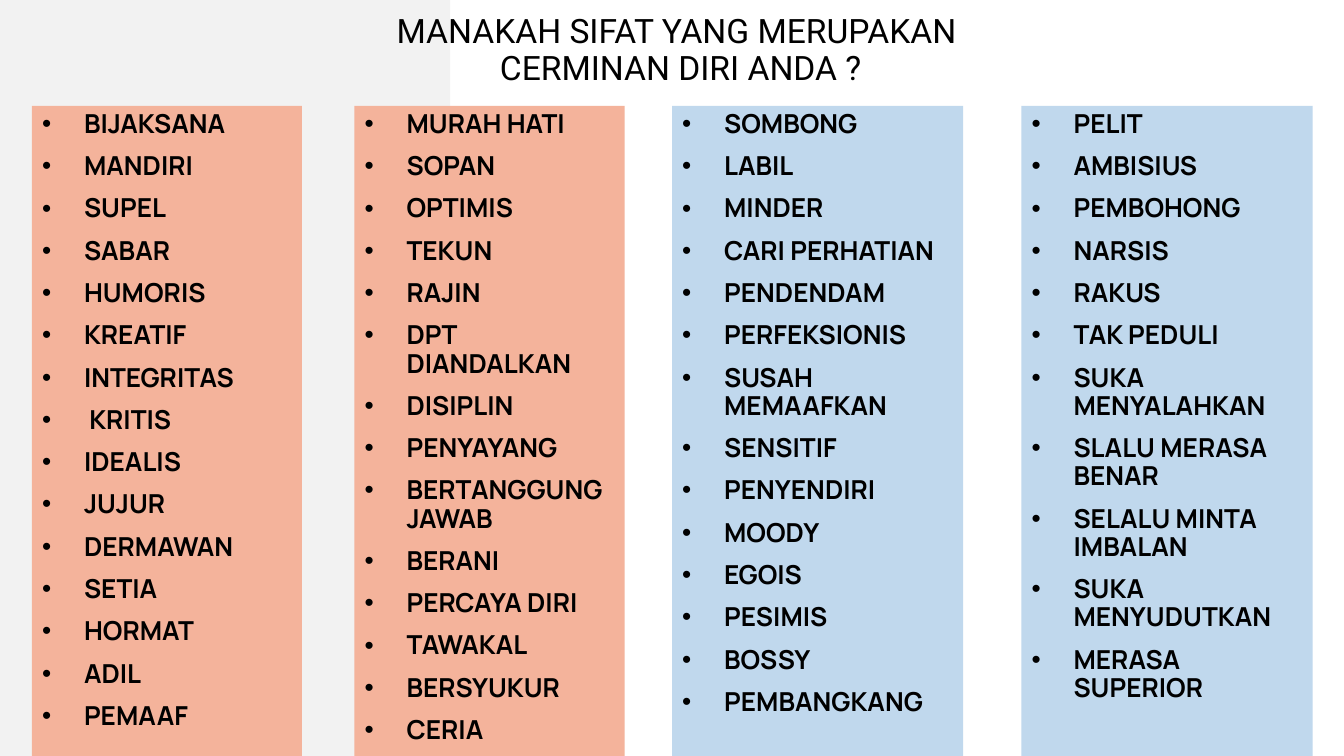
import pptx
import pptx.dml.color
import pptx.enum.shapes
import pptx.enum.text
import pptx.util
from lxml import etree
from pptx.dml.color import RGBColor
from pptx.util import Pt

BLACK = RGBColor(0x00, 0x00, 0x00)
GREY = RGBColor(0xF2, 0xF2, 0xF2)
SALMON = RGBColor(0xF4, 0xB3, 0x9B)
BLUE = RGBColor(0xC0, 0xD8, 0xED)

SLIDE_WIDTH, SLIDE_HEIGHT = 720, 405
COLUMN_TOP = 56.7
BULLET_INDENT = 22.5
COMPARISON_LAYOUT = 4  # a title and four text placeholders

TITLE_LINES = ["MANAKAH SIFAT YANG MERUPAKAN", " CERMINAN DIRI ANDA ?"]

# Left, width, fill and traits of each column
COLUMNS = [
    (17.1, 144.7, SALMON, [
        "BIJAKSANA", "MANDIRI", "SUPEL", "SABAR", "HUMORIS", "KREATIF",
        "INTEGRITAS", " KRITIS", "IDEALIS", "JUJUR", "DERMAWAN", "SETIA",
        "HORMAT", "ADIL", "PEMAAF"]),
    (189.9, 144.7, SALMON, [
        "MURAH HATI", "SOPAN", "OPTIMIS", "TEKUN", "RAJIN",
        "DPT DIANDALKAN", "DISIPLIN", "PENYAYANG", "BERTANGGUNGJAWAB",
        "BERANI", "PERCAYA DIRI", "TAWAKAL", "BERSYUKUR", "CERIA"]),
    (360, 156, BLUE, [
        "SOMBONG", "LABIL", "MINDER", "CARI PERHATIAN", "PENDENDAM",
        "PERFEKSIONIS", "SUSAH MEMAAFKAN", "SENSITIF", "PENYENDIRI",
        "MOODY", "EGOIS", "PESIMIS", "BOSSY", "PEMBANGKANG"]),
    (547.2, 156, BLUE, [
        "PELIT", "AMBISIUS", "PEMBOHONG", "NARSIS", "RAKUS", "TAK PEDULI",
        "SUKA MENYALAHKAN", "SLALU MERASA BENAR", "SELALU MINTA IMBALAN",
        "SUKA MENYUDUTKAN", "MERASA SUPERIOR"]),
]


def place(shape, box):
    shape.left, shape.top, shape.width, shape.height = map(Pt, box)


def prepare_frame(shape, anchor):
    frame = shape.text_frame
    frame.word_wrap = True
    frame.auto_size = pptx.enum.text.MSO_AUTO_SIZE.NONE
    frame.vertical_anchor = anchor
    frame.margin_left = frame.margin_right = Pt(5.4)
    frame.margin_top = frame.margin_bottom = Pt(2.7)
    return frame


def add_run(paragraph, text, font_name, size, bold):
    run = paragraph.add_run()
    run.text = text
    run.font.name = font_name
    run.font.size = Pt(size)
    run.font.bold = bold
    run.font.color.rgb = BLACK


def set_bullet(paragraph):
    properties = paragraph._p.get_or_add_pPr()
    properties.set("marL", str(Pt(BULLET_INDENT)))
    properties.set("indent", str(-Pt(BULLET_INDENT)))
    namespace = pptx.oxml.ns.nsdecls("a")
    for markup in (f'<a:buFont {namespace} typeface="Arial"/>',
                   f'<a:buChar {namespace} char="•"/>'):
        properties.append(pptx.oxml.parse_xml(markup))


def add_side_panel(slide, box):
    panel = slide.shapes.add_shape(
        pptx.enum.shapes.MSO_SHAPE.RECTANGLE, *map(Pt, box))
    panel.shadow.inherit = False
    panel.fill.solid()
    panel.fill.fore_color.rgb = GREY
    panel.line.fill.background()
    # Send behind the placeholders
    panel._element.getparent().insert(2, panel._element)


def fill_title(title, box):
    place(title, box)
    frame = prepare_frame(title, pptx.enum.text.MSO_ANCHOR.MIDDLE)
    paragraph = frame.paragraphs[0]
    paragraph.alignment = pptx.enum.text.PP_ALIGN.CENTER
    paragraph.line_spacing = 0.9
    for index, line in enumerate(TITLE_LINES):
        if index:
            paragraph.add_line_break()
        add_run(paragraph, line, "Roboto", 18, False)


def fill_column(body, box, color, traits):
    place(body, box)
    body.fill.solid()
    body.fill.fore_color.rgb = color
    frame = prepare_frame(body, pptx.enum.text.MSO_ANCHOR.TOP)
    for index, trait in enumerate(traits):
        paragraph = frame.add_paragraph() if index else frame.paragraphs[0]
        paragraph.alignment = pptx.enum.text.PP_ALIGN.LEFT
        paragraph.line_spacing = 0.9
        paragraph.space_before = Pt(7.5)
        paragraph.space_after = Pt(0)
        set_bullet(paragraph)
        add_run(paragraph, trait, "Manrope", 14, True)


def main():
    presentation = pptx.Presentation()
    presentation.slide_width = Pt(SLIDE_WIDTH)
    presentation.slide_height = Pt(SLIDE_HEIGHT)
    slide = presentation.slides.add_slide(
        presentation.slide_layouts[COMPARISON_LAYOUT])

    # Background panel and title
    add_side_panel(slide, (0, 0, 241.2, SLIDE_HEIGHT))
    fill_title(slide.shapes.title, (177.8, 5.8, 369.4, 43.2))

    # Four columns of traits, down to the slide's lower edge
    bodies = [shape for shape in slide.placeholders
              if 1 <= shape.placeholder_format.idx <= len(COLUMNS)]
    for body, (left, width, color, traits) in zip(bodies, COLUMNS):
        box = (left, COLUMN_TOP, width, SLIDE_HEIGHT - COLUMN_TOP)
        fill_column(body, box, color, traits)

    presentation.save("out.pptx")


if __name__ == "__main__":
    main()
